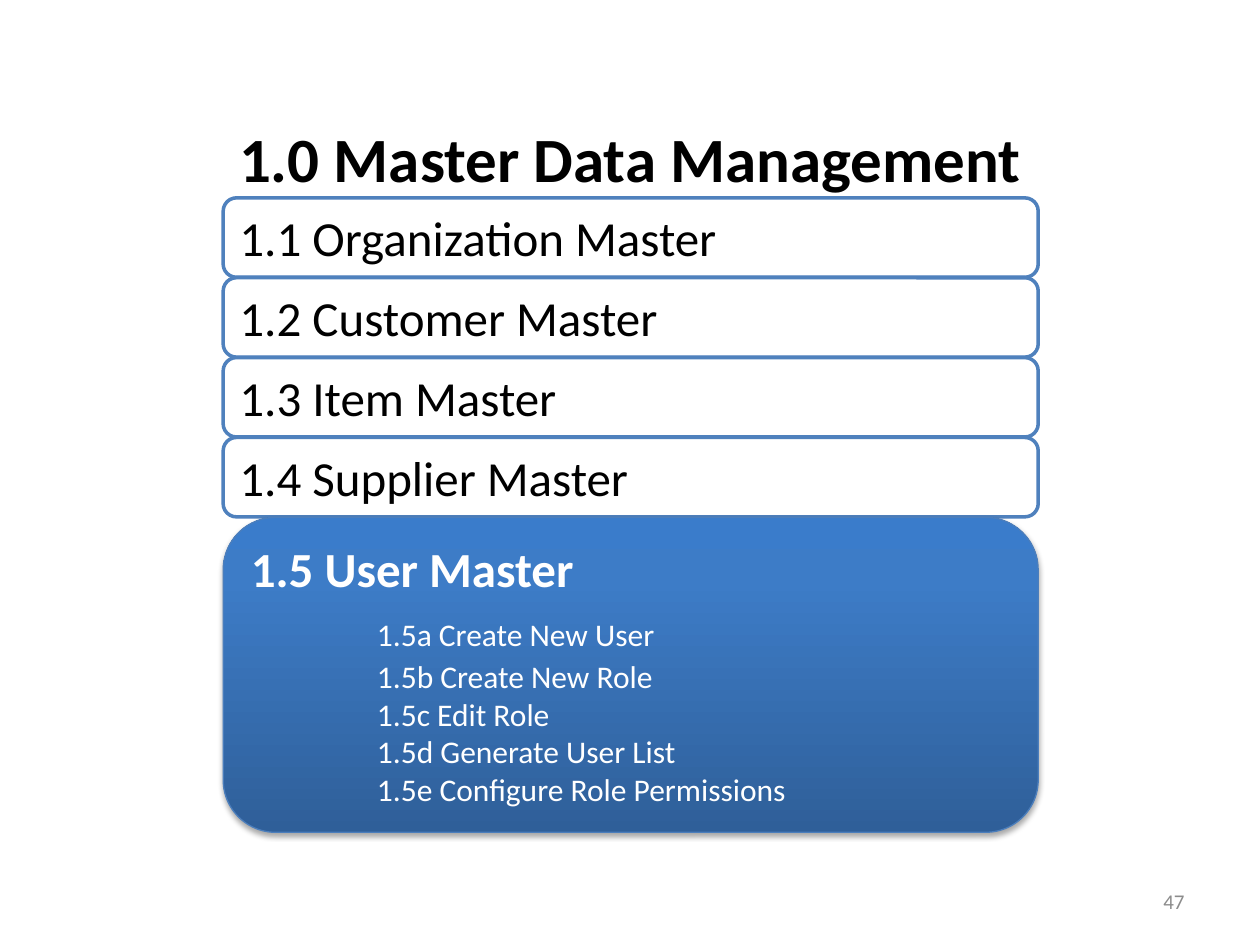
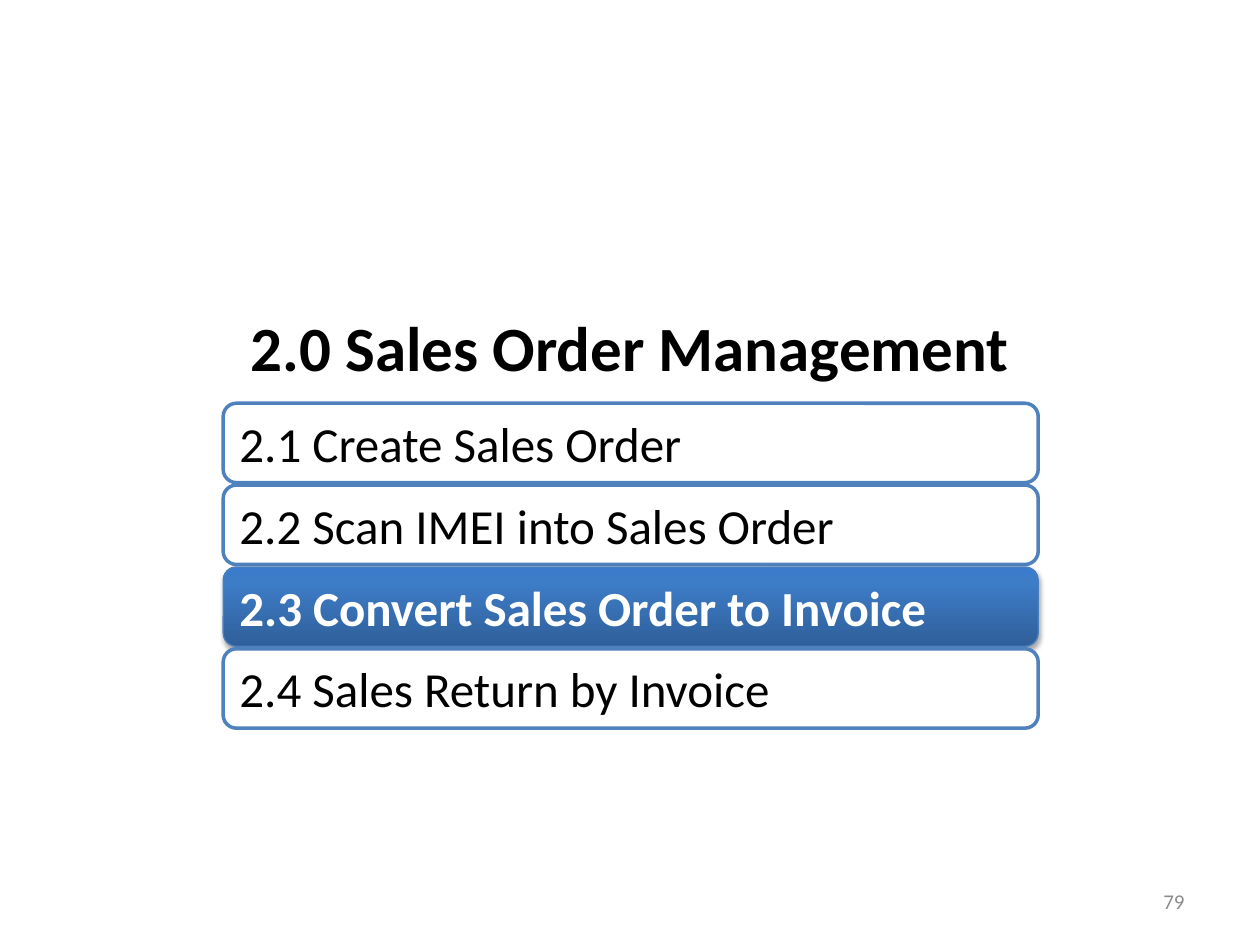
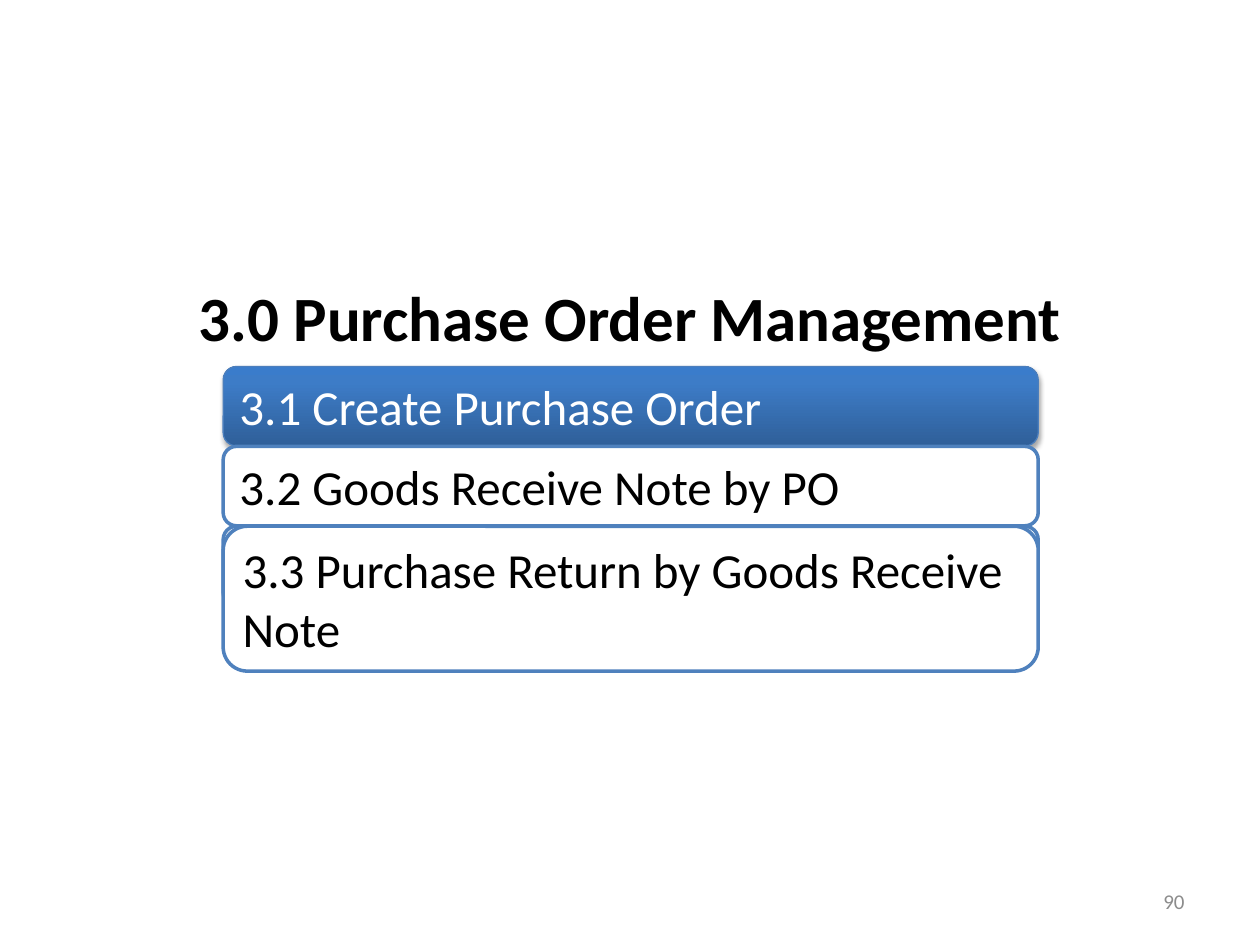
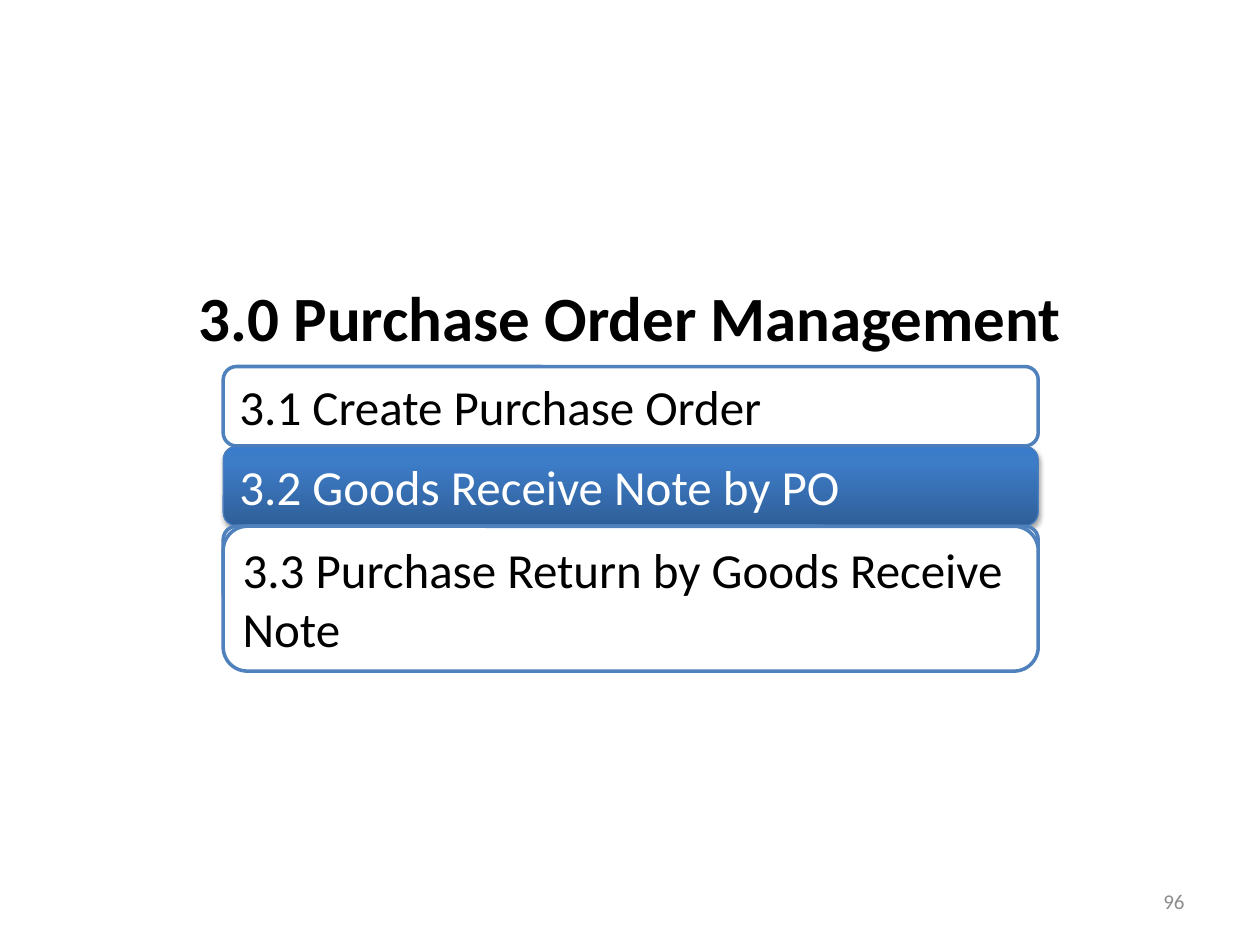
from copy import deepcopy
from dataclasses import dataclass

from lxml import etree
from pptx import Presentation
from pptx.dml.color import RGBColor
from pptx.enum.shapes import MSO_SHAPE
from pptx.enum.text import MSO_ANCHOR, MSO_AUTO_SIZE, PP_ALIGN
from pptx.oxml.ns import qn
from pptx.util import Cm, Pt

ROUND_RECT = MSO_SHAPE.ROUNDED_RECTANGLE
TOP, MIDDLE = MSO_ANCHOR.TOP, MSO_ANCHOR.MIDDLE
LEFT, CENTER, RIGHT = PP_ALIGN.LEFT, PP_ALIGN.CENTER, PP_ALIGN.RIGHT
GROW = MSO_AUTO_SIZE.SHAPE_TO_FIT_TEXT

FONT = "Calibri"
BLACK, WHITE, GREY = "000000", "FFFFFF", "8C8C8C"
OUTLINE, ACTIVE_OUTLINE = "4F81BD", "4B7EBC"
ACTIVE_STOPS = ((0, "2F5F99"), (0.8, "3D7CC7"), (1, "3A7CCB"))

SLIDE_W, SLIDE_H = 25.4, 19.05
ROW_LEFT, ROW_W, ROW_H = 4.5, 16.43, 1.6
TITLE_H = 1.8


@dataclass(frozen=True)
class Row:
    text: str
    active: bool = False
    bold: bool = False
    height: float = ROW_H
    steps: tuple[str, ...] = ()


@dataclass(frozen=True)
class Agenda:
    title: str
    title_top: float
    title_w: float
    rows_top: float
    pitch: float
    rows: tuple[Row, ...]
    page: int


def purchase_agenda(active: int, page: int) -> Agenda:
    """Purchase order agenda with the row at index active highlighted."""
    items = (
        ("3.1 Create Purchase Order", ROW_H),
        ("3.2 Goods Receive Note by PO", ROW_H),
        ("3.3 Purchase Return by Goods Receive Note", 2.92),
    )
    rows = tuple(Row(text, active=i == active, height=height)
                 for i, (text, height) in enumerate(items))
    return Agenda("3.0 Purchase Order Management", 5.49, 18.08, 7.39, 1.61, rows, page)


AGENDAS = (
    Agenda("1.0 Master Data Management", 2.29, ROW_W, 3.99, 1.61, (
        Row("1.1 Organization Master"),
        Row("1.2 Customer Master"),
        Row("1.3 Item Master"),
        Row("1.4 Supplier Master"),
        Row("1.5 User Master", active=True, bold=True, height=6.35, steps=(
            "1.5a Create New User",
            "1.5b Create New Role",
            "1.5c Edit Role",
            "1.5d Generate User List",
            "1.5e Configure Role Permissions",
        )),
    ), 47),
    Agenda("2.0 Sales Order Management", 6.1, 15.95, 8.13, 1.65, (
        Row("2.1 Create Sales Order"),
        Row("2.2 Scan IMEI into Sales Order"),
        Row("2.3 Convert Sales Order to Invoice", active=True, bold=True),
        Row("2.4 Sales Return by Invoice"),
    ), 79),
    purchase_agenda(active=0, page=90),
    purchase_agenda(active=1, page=96),
)


def rgb(color: str) -> RGBColor:
    return RGBColor.from_string(color)


def write(p, text: str, size: float, color: str, bold: bool = False, align=LEFT) -> None:
    p.alignment = align
    r = p.add_run()
    r.text = text
    for name, value in {"name": FONT, "size": Pt(size), "bold": bold}.items():
        setattr(r.font, name, value)
    r.font.color.rgb = rgb(color)


def add_label(slide, box: tuple, text: str, size: float, color: str, align,
              bold: bool = False, **frame) -> None:
    tf = slide.shapes.add_textbox(*map(Cm, box)).text_frame
    for name, value in frame.items():
        setattr(tf, name, value)
    write(tf.paragraphs[0], text, size, color, bold, align)


def highlight(s) -> None:
    """Give a shape the blue gradient and the soft shadow of the current row."""
    s.fill.gradient()
    stops = s.element.spPr.find(".//" + qn("a:gsLst"))
    stops.append(deepcopy(stops[-1]))
    for stop, (position, color) in zip(s.fill.gradient_stops, ACTIVE_STOPS):
        stop.position = position
        stop.color.rgb = rgb(color)
    s.fill.gradient_angle = 90

    effects = s.element.spPr.find(qn("a:effectLst"))
    shadow = etree.SubElement(effects, qn("a:outerShdw"), blurRad=str(Pt(3.1)),
                              dist=str(Pt(1.8)), dir="5400000", rotWithShape="0")
    color = etree.SubElement(shadow, qn("a:srgbClr"), val=BLACK)
    etree.SubElement(color, qn("a:alpha"), val="35000")


def add_box(slide, top: float, height: float, active: bool = False):
    s = slide.shapes.add_shape(ROUND_RECT, *map(Cm, (ROW_LEFT, top, ROW_W, height)))
    s.shadow.inherit = False
    if active:
        highlight(s)
    else:
        s.fill.solid()
        s.fill.fore_color.rgb = rgb(WHITE)
    s.line.color.rgb = rgb(ACTIVE_OUTLINE if active else OUTLINE)
    s.line.width = Pt(0.75 if active else 2)
    return s


def add_row(slide, row: Row, top: float) -> None:
    if row.height > ROW_H and not row.steps:
        add_box(slide, top, ROW_H)  # single-line box showing behind a two-line row
    tf = add_box(slide, top, row.height, row.active).text_frame
    for name, value in {"word_wrap": True, "vertical_anchor": TOP, "auto_size": GROW}.items():
        setattr(tf, name, value)
    color = WHITE if row.active else BLACK
    write(tf.paragraphs[0], row.text, 28, color, row.bold)
    for i, step in enumerate(row.steps):
        p = tf.add_paragraph()
        p._p.get_or_add_pPr().set("marL", str(Cm(2.54)))
        if i == 0:
            p.space_before, p.space_after = Pt(9.7), Pt(2.5)
        write(p, step, 18, color)


def add_agenda(prs, agenda: Agenda) -> None:
    slide = prs.slides.add_slide(prs.slide_layouts[6])
    add_label(slide, (18.21, 17.65, 5.92, 1.02), str(agenda.page), 12, GREY, RIGHT,
              word_wrap=True, vertical_anchor=MIDDLE)
    title_left = (SLIDE_W - agenda.title_w) / 2
    add_label(slide, (title_left, agenda.title_top, agenda.title_w, TITLE_H),
              agenda.title, 36, BLACK, CENTER, bold=True, word_wrap=False, auto_size=GROW)
    for i, row in enumerate(agenda.rows):
        add_row(slide, row, agenda.rows_top + i * agenda.pitch)


def main() -> None:
    prs = Presentation()
    prs.slide_width, prs.slide_height = Cm(SLIDE_W), Cm(SLIDE_H)
    for agenda in AGENDAS:
        add_agenda(prs, agenda)
    prs.save("out.pptx")


if __name__ == "__main__":
    main()
